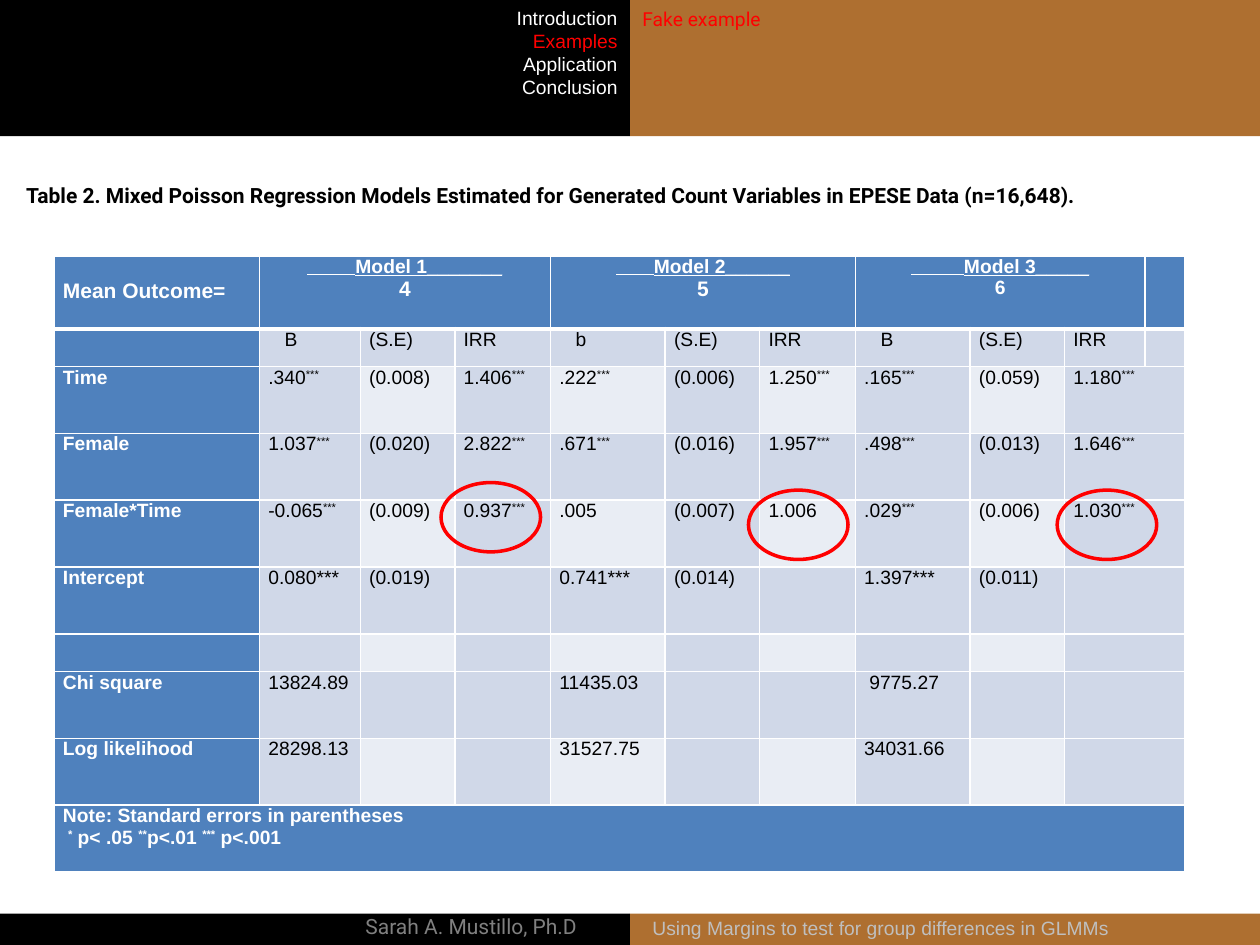
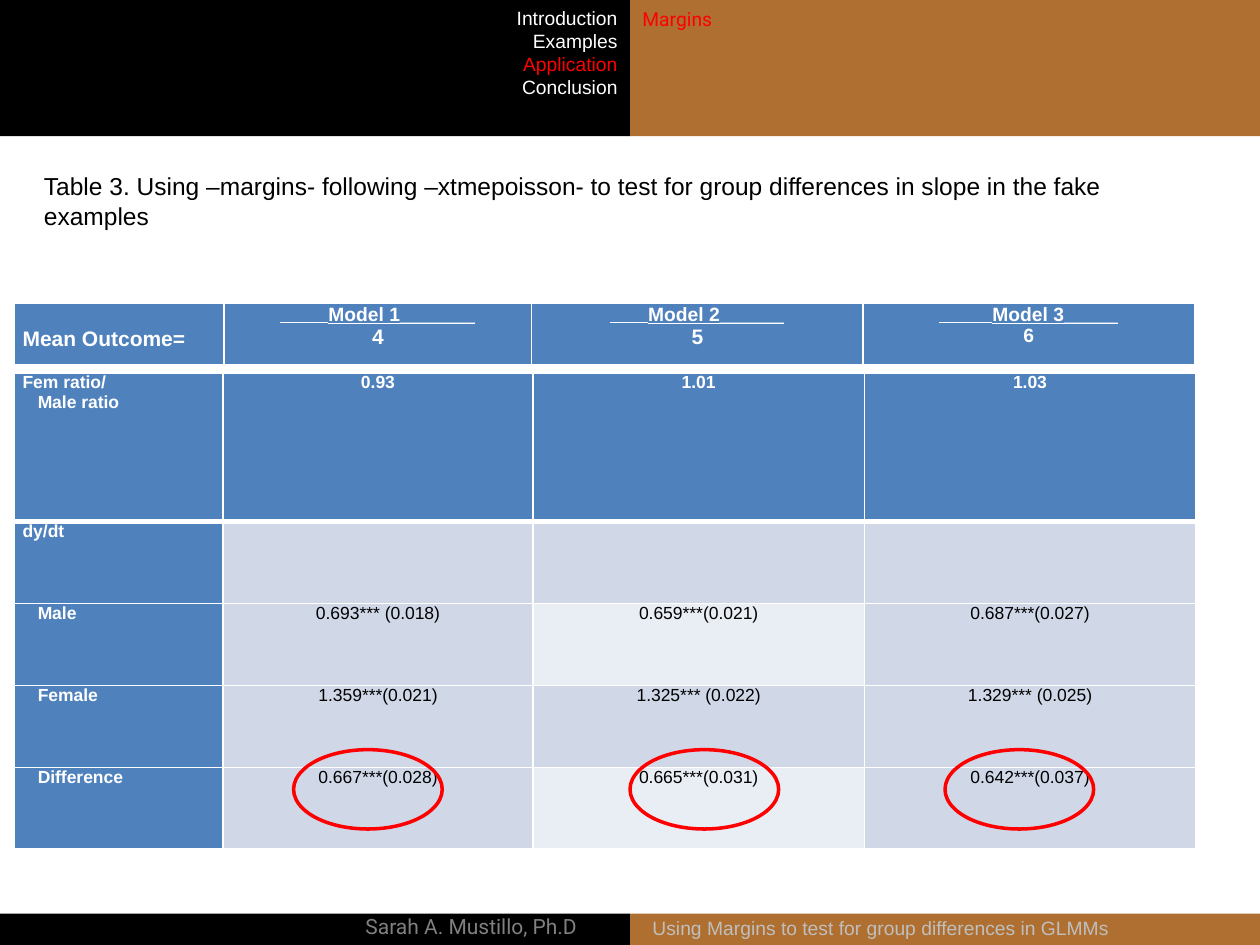
from itertools import accumulate

from lxml import etree
from pptx import Presentation
from pptx.dml.color import RGBColor
from pptx.enum.shapes import MSO_CONNECTOR as Connector, MSO_SHAPE as Shape
from pptx.enum.text import PP_ALIGN as Align
from pptx.oxml.ns import qn
from pptx.util import Inches, Pt

WIDTH, HEIGHT = 10, 7.5
HALF = WIDTH / 2
BLACK, WHITE, RED, BROWN = "000000", "FFFFFF", "FF0000", "AE6F30"
BLUE, PALE, PALEST = "4F81BD", "D0D8E8", "E9EDF4"
GREY, SILVER = "808080", "BFBFBF"

SECTIONS = ["Introduction", "Examples", "Application", "Conclusion"]
AUTHOR = "Sarah A. Mustillo, Ph.D"
TALK = "Using Margins to test for group differences in GLMMs"

# Label, mean outcome, its size, length of the rule before the label, whole rule
MODELS = [
    ("Model 1_______", "4", 12, 0.38, 1.55),
    ("Model 2______", "5", 12, 0.3, 1.38),
    ("Model 3_____", "6", 11, 0.42, 1.42),
]

# A caret switches superscript on and off; a line break starts a paragraph
POISSON_TITLE = ("Table 2. Mixed Poisson Regression Models Estimated for "
                 "Generated Count Variables in EPESE Data (n=16,648).")
POISSON_ROWS = [
    [],
    ["", "B", "(S.E)", "IRR", "b", "(S.E)", "IRR", "B", "(S.E)", "IRR"],
    ["Time", ".340^***", "(0.008)", "1.406^***", ".222^***", "(0.006)",
     "1.250^***", ".165^***", "(0.059)", "1.180^***"],
    ["Female", "1.037^***", "(0.020)", "2.822^***", ".671^***", "(0.016)",
     "1.957^***", ".498^***", "(0.013)", "1.646^***"],
    ["Female*Time", "-0.065^***", "(0.009)", "0.937^***", ".005", "(0.007)",
     "1.006", ".029^***", "(0.006)", "1.030^***"],
    ["Intercept", "0.080***", "(0.019)", "", "0.741***", "(0.014)", "",
     "1.397***", "(0.011)"],
    [],
    ["Chi square", "13824.89", "", "", "11435.03", "", "", "9775.27"],
    ["Log likelihood", "28298.13", "", "", "31527.75", "", "", "34031.66"],
    ["Note: Standard errors in parentheses\n"
     "^*^ p< .05 ^**^p<.01 ^***^ p<.001"],
]
POISSON_COLUMNS = [1.63, 0.8, 0.75, 0.76, 0.91, 0.75, 0.76, 0.91, 0.75, 0.64, 0.31]
POISSON_HEIGHTS = [0.58, 0.29] + [0.53] * 4 + [0.29] + [0.53] * 3
POISSON_INDENTS = {"B": 0.13, "b": 0.13, "9775.27": 0.04,
                   "^*^ p< .05 ^**^p<.01 ^***^ p<.001": 0.04}
POISSON_CIRCLES = [(3.5, 3.83), (5.94, 3.89), (8.39, 3.89)]

MARGINS_TITLE = ("Table 3. Using –margins- following –xtmepoisson- to test for "
                 "group differences in slope in the fake examples")
MARGINS_ROWS = [
    ["Fem ratio/\nMale ratio", "0.93", "1.01", "1.03"],
    ["dy/dt"],
    ["Male", "0.693*** (0.018)", "0.659***(0.021)", "0.687***(0.027)"],
    ["Female", "1.359***(0.021)", "1.325*** (0.022)", "1.329*** (0.025)"],
    ["Difference", "0.667***(0.028)", "0.665***(0.031)", "0.642***(0.037)"],
]
MARGINS_COLUMNS = [1.66, 2.46, 2.63, 2.63]
MARGINS_HEADER_COLUMNS = [1.67, 2.44, 2.63, 2.63]
MARGINS_HEIGHTS = [1.18] + [0.65] * 4
MARGINS_INDENTS = dict.fromkeys(["Male ratio", "Male", "Female", "Difference"], 0.12)
MARGINS_CIRCLES = [(2.33, 5.95), (5, 5.95), (7.5, 5.95)]


def color(value):
    return RGBColor.from_string(value)


def inches(*lengths):
    return [Inches(length) for length in lengths]


def add_run(paragraph, text, size, ink, font="Arial", bold=False):
    run = paragraph.add_run()
    run.text = text
    run.font.size, run.font.name, run.font.bold = Pt(size), font, bold
    run.font.color.rgb = color(ink)
    return run


def add_text(slide, box, lines, size, font="Arial", align=Align.LEFT, bold=False):
    """Add a text box with one paragraph for each (text, colour) pair."""
    frame = slide.shapes.add_textbox(*inches(*box)).text_frame
    frame.word_wrap = True
    for index, (text, ink) in enumerate(lines):
        paragraph = frame.add_paragraph() if index else frame.paragraphs[0]
        paragraph.alignment = align
        add_run(paragraph, text, size, ink, font, bold)
    return frame


def add_band(slide, left, top, height, fill):
    band = slide.shapes.add_shape(Shape.RECTANGLE, *inches(left, top, HALF, height))
    band.shadow.inherit = False
    band.fill.solid()
    band.fill.fore_color.rgb = color(fill)
    band.line.fill.background()


def add_circles(slide, places, width, height):
    for place in places:
        circle = slide.shapes.add_shape(Shape.OVAL, *inches(*place, width, height))
        circle.shadow.inherit = False
        circle.fill.background()
        circle.line.color.rgb = color(RED)
        circle.line.width = Pt(2)


def add_frame(presentation, section, topic):
    """Add a slide with its bands, section list, topic and footer."""
    slide = presentation.slides.add_slide(presentation.slide_layouts[6])
    for left, fill in ((HALF, BROWN), (0, BLACK)):
        add_band(slide, left, 0, 1.08, fill)
        add_band(slide, left, 7.25, 0.25, fill)
    author = add_text(slide, (0, 7.2, HALF, 0.3), [(AUTHOR, GREY)], 12, "Roboto",
                      Align.RIGHT)
    author.margin_right = Inches(0.42)
    menu = [(name, RED if name == section else WHITE) for name in SECTIONS]
    add_text(slide, (0.11, 0, 4.89, 0.84), menu, 11, align=Align.RIGHT)
    add_text(slide, (HALF, 0.01, HALF, 0.29), [(topic, RED)], 11, "Roboto")
    add_text(slide, (5.08, 7.22, 4.8, 0.29), [(TALK, SILVER)], 11)
    return slide


def style_cell(cell, fill, top=1, bottom=1):
    """Set insets, white borders of the given widths, and the fill."""
    cell.margin_left = cell.margin_right = Inches(0.07)
    cell.margin_top = cell.margin_bottom = 0
    properties = cell._tc.get_or_add_tcPr()
    for tag, width in (("lnL", 1), ("lnR", 1), ("lnT", top), ("lnB", bottom)):
        line = etree.SubElement(properties, qn(f"a:{tag}"), w=str(Pt(width)))
        solid = etree.SubElement(line, qn("a:solidFill"))
        etree.SubElement(solid, qn("a:srgbClr"), val=WHITE)
    cell.fill.solid()
    cell.fill.fore_color.rgb = color(fill)


def indent(paragraph, length):
    paragraph._p.get_or_add_pPr().set("marL", str(Inches(length)))


def write_cell(cell, text, size, strong, align, indents):
    for index, line in enumerate(text.split("\n")):
        frame = cell.text_frame
        paragraph = frame.add_paragraph() if index else frame.paragraphs[0]
        paragraph.alignment = align
        if line in indents:
            indent(paragraph, indents[line])
        for part, piece in enumerate(line.split("^")):
            if piece:
                run = add_run(paragraph, piece, size, WHITE if strong else BLACK,
                              bold=strong)
                if part % 2:
                    run.font._element.set("baseline", "30000")


def add_grid(slide, place, columns, heights, rows, size, indents,
             value_align=Align.LEFT, blue_rows=(0,)):
    """Add a table with a blue first column and checkered values."""
    box = inches(*place, sum(columns), sum(heights))
    table = slide.shapes.add_table(len(heights), len(columns), *box).table
    table.first_row = table.horz_banding = False
    for column, width in zip(table.columns, columns):
        column.width = Inches(width)
    for row, height in zip(table.rows, heights):
        row.height = Inches(height)
    for r in range(len(heights)):
        for c in range(len(columns)):
            strong = c == 0 or r in blue_rows
            light = r and r % 2 == 0 and c % 2 == 0
            cell = table.cell(r, c)
            style_cell(cell, BLUE if strong else PALEST if light else PALE,
                       top=3 if r == 1 else 1, bottom=3 if r == 0 else 1)
            if c < len(rows[r]) and rows[r][c]:
                write_cell(cell, rows[r][c], size, strong,
                           value_align if c else Align.LEFT, indents)
    return table


def add_rule(slide, left, top, length):
    rule = slide.shapes.add_connector(
        Connector.STRAIGHT, *inches(left, top, left + length, top))
    rule.line.color.rgb = color(WHITE)
    rule.line.width = Pt(0.75)
    etree.SubElement(rule._element.spPr, qn("a:effectLst"))


def write_model_header(slide, table, place, columns, span):
    """Fill the first row; each model covers span columns."""
    left, top = place
    edges = [left, *accumulate(columns, initial=left)][1:]
    outcome = table.cell(0, 0)
    outcome.margin_top = Inches(0.19)
    add_run(outcome.text_frame.paragraphs[0], "Mean Outcome=", 12, WHITE, bold=True)
    for index, (label, mean, size, lead, length) in enumerate(MODELS):
        first = 1 + index * span
        cell = table.cell(0, first)
        if span > 1:
            cell.merge(table.cell(0, first + span - 1))
        name = cell.text_frame.paragraphs[0]
        indent(name, lead)
        add_run(name, label, 11, WHITE, bold=True).font.underline = True
        value = cell.text_frame.add_paragraph()
        add_run(value, mean, size, WHITE, bold=True)
        name.alignment = value.alignment = Align.CENTER
        middle = (edges[first] + edges[first + span]) / 2
        add_rule(slide, middle - length / 2, top + 0.15, lead)


def build_poisson_slide(presentation):
    slide = add_frame(presentation, "Examples", "Fake example")
    place = (0.43, 2.03)
    last = len(POISSON_ROWS) - 1
    table = add_grid(slide, place, POISSON_COLUMNS, POISSON_HEIGHTS, POISSON_ROWS,
                     11, POISSON_INDENTS, blue_rows=(0, last))
    write_model_header(slide, table, place, POISSON_COLUMNS, 3)
    for r in range(2, last):
        table.cell(r, 9).merge(table.cell(r, 10))
    table.cell(last, 0).merge(table.cell(last, 10))
    add_text(slide, (0.11, 1.4, 9.77, 0.61), [(POISSON_TITLE, BLACK)], 12,
             "Roboto", bold=True)
    add_circles(slide, POISSON_CIRCLES, 0.79, 0.55)


def build_margins_slide(presentation):
    slide = add_frame(presentation, "Application", "Margins")
    add_text(slide, (0.25, 1.31, 9.45, 0.34), [(MARGINS_TITLE, BLACK)], 14)
    add_grid(slide, (0.11, 2.96), MARGINS_COLUMNS, MARGINS_HEIGHTS, MARGINS_ROWS,
             10, MARGINS_INDENTS, Align.CENTER)
    place = (0.11, 2.41)
    header = add_grid(slide, place, MARGINS_HEADER_COLUMNS, [0.5], [[]], 12, {})
    write_model_header(slide, header, place, MARGINS_HEADER_COLUMNS, 1)
    add_circles(slide, MARGINS_CIRCLES, 1.18, 0.63)


def main():
    presentation = Presentation()
    presentation.slide_width, presentation.slide_height = inches(WIDTH, HEIGHT)
    build_poisson_slide(presentation)
    build_margins_slide(presentation)
    presentation.save("out.pptx")


if __name__ == "__main__":
    main()
